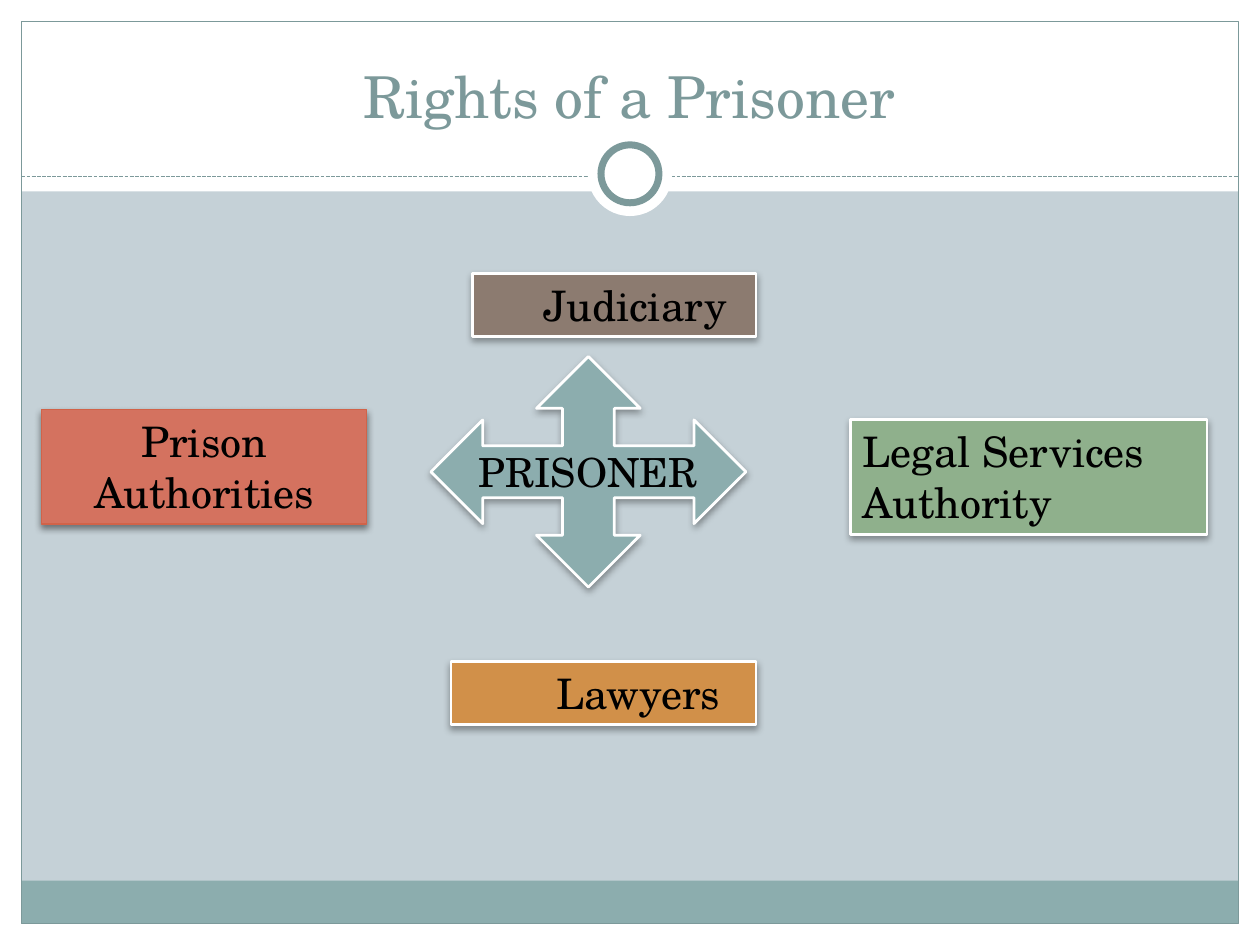
from lxml import etree
from pptx import Presentation
from pptx.dml.color import RGBColor
from pptx.enum import dml, shapes, text
from pptx.oxml import ns
from pptx.util import Inches, Pt

COLORS = {
    "background": "C5D1D7", "white": "FFFFFF", "black": "000000",
    "teal": "8CADAE", "trim": "7C999A", "red": "D4725F", "red edge": "D16349",
    "green": "8FB08C", "brown": "8C7B70", "orange": "D19049",
}
FONT = "TeX Gyre Schola"
SHAPE = shapes.MSO_SHAPE
ALIGN = text.PP_ALIGN


def rgb(name):
    """Return the named colour."""
    return RGBColor.from_string(COLORS[name])


def add_effects(element, opacity=0):
    """Add an effect list, with a soft downward shadow if opacity is given."""
    effects = etree.SubElement(element.spPr, ns.qn("a:effectLst"))
    if opacity:
        shadow = etree.SubElement(
            effects, ns.qn("a:outerShdw"), blurRad=str(Pt(4)),
            dist=str(Pt(2)), dir="5400000", rotWithShape="0")
        black = etree.SubElement(shadow, ns.qn("a:srgbClr"), val=COLORS["black"])
        etree.SubElement(black, ns.qn("a:alpha"), val=str(opacity * 1000))


def add_figure(slide, box, kind=SHAPE.RECTANGLE, fill=None, edge=None, width=0.75, shadow=0):
    """Draw one preset shape in the box."""
    figure = slide.shapes.add_shape(kind, *map(Inches, box))
    if fill:
        figure.fill.solid()
        figure.fill.fore_color.rgb = rgb(fill)
    else:
        figure.fill.background()
    if edge:
        figure.line.color.rgb = rgb(edge)
        figure.line.width = Pt(width)
    else:
        figure.line.fill.background()
    add_effects(figure._element, shadow)
    return figure


def write(figure, words, size, color="black", align=ALIGN.CENTER,
          anchor=text.MSO_ANCHOR.TOP, wrap=True, indent=0.1):
    """Write one paragraph into the figure."""
    frame = figure.text_frame
    frame.word_wrap = wrap
    frame.vertical_anchor = anchor
    frame.margin_left = Inches(indent)
    paragraph = frame.paragraphs[0]
    paragraph.text = words
    paragraph.alignment = align
    paragraph.font.size = Pt(size)
    paragraph.font.name = FONT
    paragraph.font.color.rgb = rgb(color)


def add_frame(slide, width, height, margin=0.17, header=1.52):
    """Draw the white margins, footer band, border and header ring."""
    for box in (
        (0, height - margin, width, margin),
        (0, 0, width, header),
        (0, 0, margin, height),
        (width - margin, 0, margin, height),
    ):
        add_figure(slide, box, fill="white")
    inner = width - 2 * margin
    add_figure(slide, (margin, 6.99, inner, 0.34), fill="teal")
    add_figure(slide, (margin, margin, inner, height - 2 * margin), edge="trim")

    rule_y = Inches(header - 0.12)
    rule = slide.shapes.add_connector(
        shapes.MSO_CONNECTOR.STRAIGHT, Inches(margin), rule_y,
        Inches(width - margin), rule_y)
    rule.line.color.rgb = rgb("trim")
    rule.line.width = Pt(0.75)
    rule.line.dash_style = dml.MSO_LINE.SQUARE_DOT
    add_effects(rule._element)

    for diameter, edge in ((0.67, None), (0.46, "trim")):
        ring = ((width - diameter) / 2, 1.38 - diameter / 2, diameter, diameter)
        add_figure(slide, ring, SHAPE.OVAL, "white", edge, 4)


def add_title(slide, box, words):
    """Place the slide title at the bottom of the box."""
    title = slide.shapes.add_textbox(*map(Inches, box))
    write(title, words, 33, "trim", anchor=text.MSO_ANCHOR.BOTTOM)


def add_diagram(slide, left, top):
    """Place the prisoner arrow and the four bodies around it."""
    prisoner = add_figure(slide, (left + 3.09, top + 0.66, 2.5, 1.83),
                          SHAPE.QUAD_ARROW, "teal", "white", 1.57, 35)
    write(prisoner, "PRISONER", 22.9, anchor=text.MSO_ANCHOR.MIDDLE, wrap=False)

    bodies = (
        ("Prison Authorities", (0, 1.08, 2.58, 0.91), "red", "red edge", 0.75, 45,
         ALIGN.CENTER, 0.1),
        ("Legal Services Authority", (6.42, 1.16, 2.83, 0.91), "green", "white", 1.57, 35,
         ALIGN.LEFT, 0.1),
        ("Judiciary", (3.42, 0, 2.25, 0.5), "brown", "white", 1.57, 35, ALIGN.LEFT, 0.56),
        ("Lawyers", (3.25, 3.08, 2.42, 0.5), "orange", "white", 1.57, 35, ALIGN.LEFT, 0.84),
    )
    for words, (x, y, width, height), fill, edge, weight, shadow, align, indent in bodies:
        body = add_figure(slide, (left + x, top + y, width, height),
                          fill=fill, edge=edge, width=weight, shadow=shadow)
        write(body, words, 24, align=align, indent=indent)


def main():
    """Build and save the slide."""
    width, height = 10, 7.5
    deck = Presentation()
    deck.slide_width, deck.slide_height = Inches(width), Inches(height)
    slide = deck.slides.add_slide(deck.slide_layouts[6])
    slide.background.fill.solid()
    slide.background.fill.fore_color.rgb = rgb("background")
    add_frame(slide, width, height)
    add_title(slide, (0.33, 0.25, 9.33, 0.83), "Rights of a Prisoner")
    add_diagram(slide, 0.33, 2.17)
    deck.save("out.pptx")


if __name__ == "__main__":
    main()
